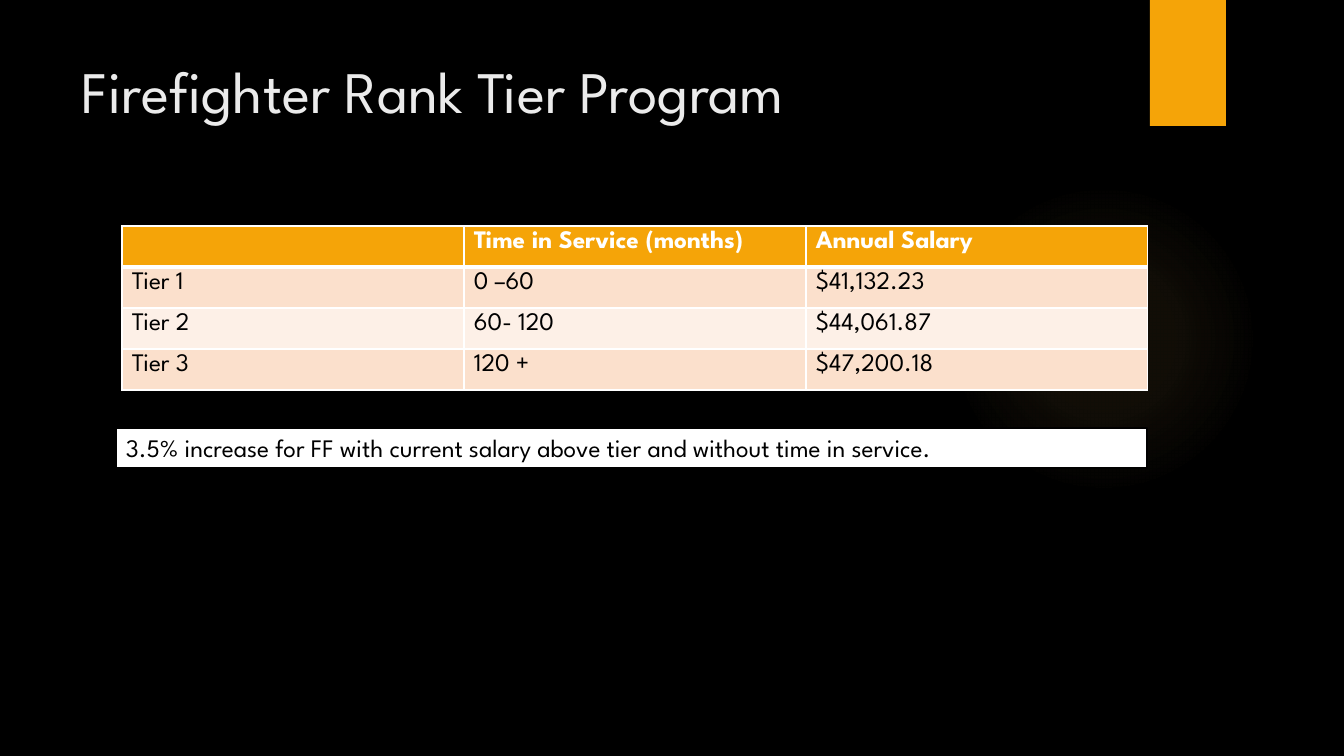
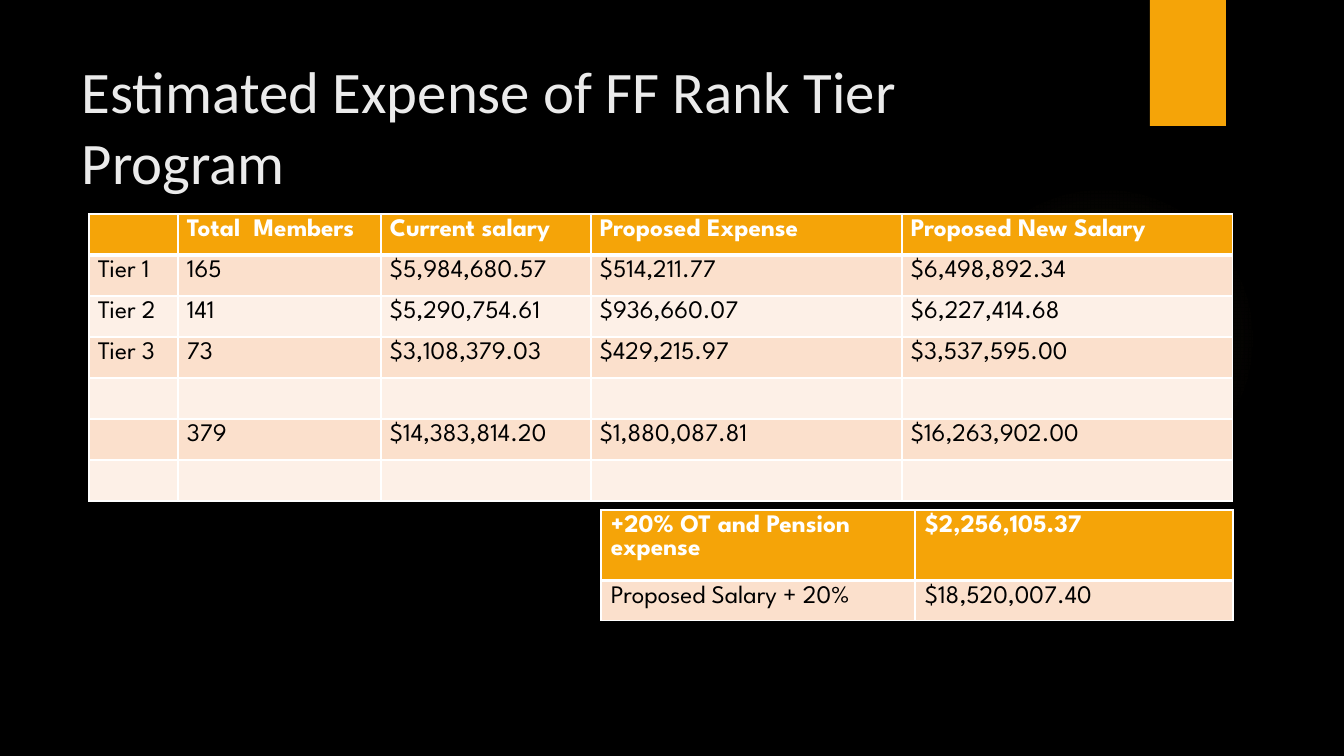
from dataclasses import dataclass

from lxml import etree
from pptx import Presentation
from pptx.dml.color import RGBColor
from pptx.enum.shapes import MSO_SHAPE
from pptx.enum.text import MSO_ANCHOR, PP_ALIGN
from pptx.oxml import parse_xml
from pptx.oxml.ns import qn
from pptx.util import Emu, Pt

RECT, OVAL = MSO_SHAPE.RECTANGLE, MSO_SHAPE.OVAL
TOP, BOTTOM = MSO_ANCHOR.TOP, MSO_ANCHOR.BOTTOM
LEFT, JUSTIFY = PP_ALIGN.LEFT, PP_ALIGN.JUSTIFY

EMU_PER_PX = 12192000 / 1344
DRAWING_NS = "http://schemas.openxmlformats.org/drawingml/2006/main"

BODY_FONT, BODY_SIZE = "League Spartan", 18
BLACK, WHITE, TITLE_GREY = "000000", "FFFFFF", "EBEBEB"
AMBER, GLOW = "F5A408", "FAC96A"
BANDS = ("FBE0CC", "FDF0E7")
THIN, THICK = 1, 3


@dataclass(frozen=True)
class Box:
    left: int
    top: int
    width: int
    height: int


@dataclass(frozen=True)
class Grid:
    left: int
    top: int
    columns: tuple[int, ...]
    row_heights: tuple[int, ...]
    rows: tuple[tuple[str, ...], ...]
    align: PP_ALIGN = LEFT
    side_inset: int = 10


TITLE_BOX = Box(72, 50, 1037, 154)
TAB_BOX = Box(1150, 0, 76, 126)
GLOW_BOX = Box(949, 184, 310, 310)
NOTE_BOX = Box(116, 428, 1031, 40)

TIERS = Grid(
    122, 226, (342,) * 3, (41,) * 4,
    (
        ("", "Time in Service (months)", "Annual Salary"),
        ("Tier 1", "0 –60", "$41,132.23"),
        ("Tier 2", "60- 120", "$44,061.87"),
        ("Tier 3", "120 +", "$47,200.18"),
    ),
)
EXPENSES = Grid(
    89, 214, (89, 203, 210, 311, 331), (41,) * 7,
    (
        ("", "Total  Members", "Current salary", "Proposed Expense", "Proposed New Salary"),
        ("Tier 1", "165", "$5,984,680.57", "$514,211.77", "$6,498,892.34"),
        ("Tier 2", "141", "$5,290,754.61", "$936,660.07", "$6,227,414.68"),
        ("Tier 3", "73", "$3,108,379.03", "$429,215.97", "$3,537,595.00"),
        ("",) * 5,
        ("", "379", "$14,383,814.20", "$1,880,087.81", "$16,263,902.00"),
        ("",) * 5,
    ),
    JUSTIFY, 9,
)
OVERTIME = Grid(
    601, 510, (314, 318), (56, 34),
    (
        ("+20% OT and Pension expense", "$2,256,105.37"),
        ("Proposed Salary + 20%", "$18,520,007.40"),
    ),
)


def px(length: int) -> Emu:
    return Emu(round(length * EMU_PER_PX))


def color(hex_value: str) -> RGBColor:
    return RGBColor.from_string(hex_value)


def place(box: Box) -> tuple[Emu, ...]:
    return px(box.left), px(box.top), px(box.width), px(box.height)


def style(paragraph, font_name: str, size: int, hex_value: str, bold: bool = False) -> None:
    font = paragraph.font
    font.name, font.size, font.bold = font_name, Pt(size), bold
    font.color.rgb = color(hex_value)


def add_block(slide, kind, box: Box, fill: str):
    block = slide.shapes.add_shape(kind, *place(box))
    block.shadow.inherit = False
    block.fill.solid()
    block.fill.fore_color.rgb = color(fill)
    block.line.fill.background()
    return block


def add_glow(slide) -> None:
    glow = add_block(slide, OVAL, GLOW_BOX, GLOW)
    stops = "".join(
        f'<a:gs pos="{position * 1000}"><a:srgbClr val="{GLOW}">'
        f'<a:alpha val="{opacity * 1000}"/></a:srgbClr></a:gs>'
        for position, opacity in ((0, 7), (36, 6), (69, 0))
    )
    gradient = parse_xml(
        f'<a:gradFill xmlns:a="{DRAWING_NS}" rotWithShape="1"><a:gsLst>{stops}</a:gsLst>'
        '<a:path path="circle"><a:fillToRect l="50000" t="50000" r="50000" b="50000"/>'
        "</a:path></a:gradFill>"
    )
    properties = glow.element.spPr
    properties.replace(properties.find(qn("a:solidFill")), gradient)


def add_tab(slide) -> None:
    tab = add_block(slide, RECT, TAB_BOX, AMBER)
    tab.element.spPr.find(qn("a:effectLst")).append(parse_xml(
        f'<a:outerShdw xmlns:a="{DRAWING_NS}" blurRad="{Pt(3)}" dist="{Pt(2)}" dir="5400000">'
        f'<a:srgbClr val="{BLACK}"><a:alpha val="45000"/></a:srgbClr></a:outerShdw>'
    ))


def add_title(slide, text: str, font_name: str) -> None:
    frame = slide.shapes.add_textbox(*place(TITLE_BOX)).text_frame
    frame.word_wrap = True
    frame.vertical_anchor = TOP
    frame.text = text
    style(frame.paragraphs[0], font_name, 42, TITLE_GREY)


def add_note(slide, text: str) -> None:
    note = add_block(slide, RECT, NOTE_BOX, WHITE)
    note.line.color.rgb = color(BLACK)
    note.line.width = Pt(1.5)
    frame = note.text_frame
    frame.word_wrap = True
    frame.vertical_anchor = BOTTOM
    frame.text = text
    frame.paragraphs[0].alignment = LEFT
    style(frame.paragraphs[0], BODY_FONT, BODY_SIZE, BLACK)


def set_borders(cell, top: int, bottom: int) -> None:
    properties = cell._tc.get_or_add_tcPr()
    widths = (("lnL", THIN), ("lnR", THIN), ("lnT", top), ("lnB", bottom))
    for index, (edge, width) in enumerate(widths):
        line = etree.Element(qn(f"a:{edge}"), w=str(Pt(width)))
        fill = etree.SubElement(line, qn("a:solidFill"))
        etree.SubElement(fill, qn("a:srgbClr"), val=WHITE)
        properties.insert(index, line)


def add_grid(slide, grid: Grid) -> None:
    box = Box(grid.left, grid.top, sum(grid.columns), sum(grid.row_heights))
    table = slide.shapes.add_table(len(grid.rows), len(grid.columns), *place(box)).table
    table.first_row = table.horz_banding = False
    for column, width in zip(table.columns, grid.columns):
        column.width = px(width)
    for r, (height, texts) in enumerate(zip(grid.row_heights, grid.rows)):
        table.rows[r].height = px(height)
        header = r == 0
        for c, text in enumerate(texts):
            cell = table.cell(r, c)
            cell.margin_left = cell.margin_right = px(grid.side_inset)
            cell.margin_top = cell.margin_bottom = px(5)
            cell.fill.solid()
            cell.fill.fore_color.rgb = color(AMBER if header else BANDS[(r - 1) % 2])
            set_borders(cell, THICK if r == 1 else THIN, THICK if header else THIN)
            cell.text = text
            paragraph = cell.text_frame.paragraphs[0]
            paragraph.alignment = grid.align
            style(paragraph, BODY_FONT, BODY_SIZE, WHITE if header else BLACK, header)


def add_slide(deck, title: str, title_font: str):
    slide = deck.slides.add_slide(deck.slide_layouts[6])
    add_glow(slide)
    add_tab(slide)
    add_title(slide, title, title_font)
    return slide


def main() -> None:
    deck = Presentation()
    deck.slide_width, deck.slide_height = px(1344), px(756)

    # Shared background
    backdrop = deck.slide_master.background.fill
    backdrop.solid()
    backdrop.fore_color.rgb = color(BLACK)

    # Tier salaries
    program = add_slide(deck, "Firefighter Rank Tier Program", BODY_FONT)
    add_grid(program, TIERS)
    add_note(program, "3.5% increase for FF with current salary above tier and without time in service.")

    # Cost of the program
    expense = add_slide(deck, "Estimated Expense of FF Rank Tier Program", "Calibri")
    add_grid(expense, EXPENSES)
    add_grid(expense, OVERTIME)

    deck.save("out.pptx")


if __name__ == "__main__":
    main()
